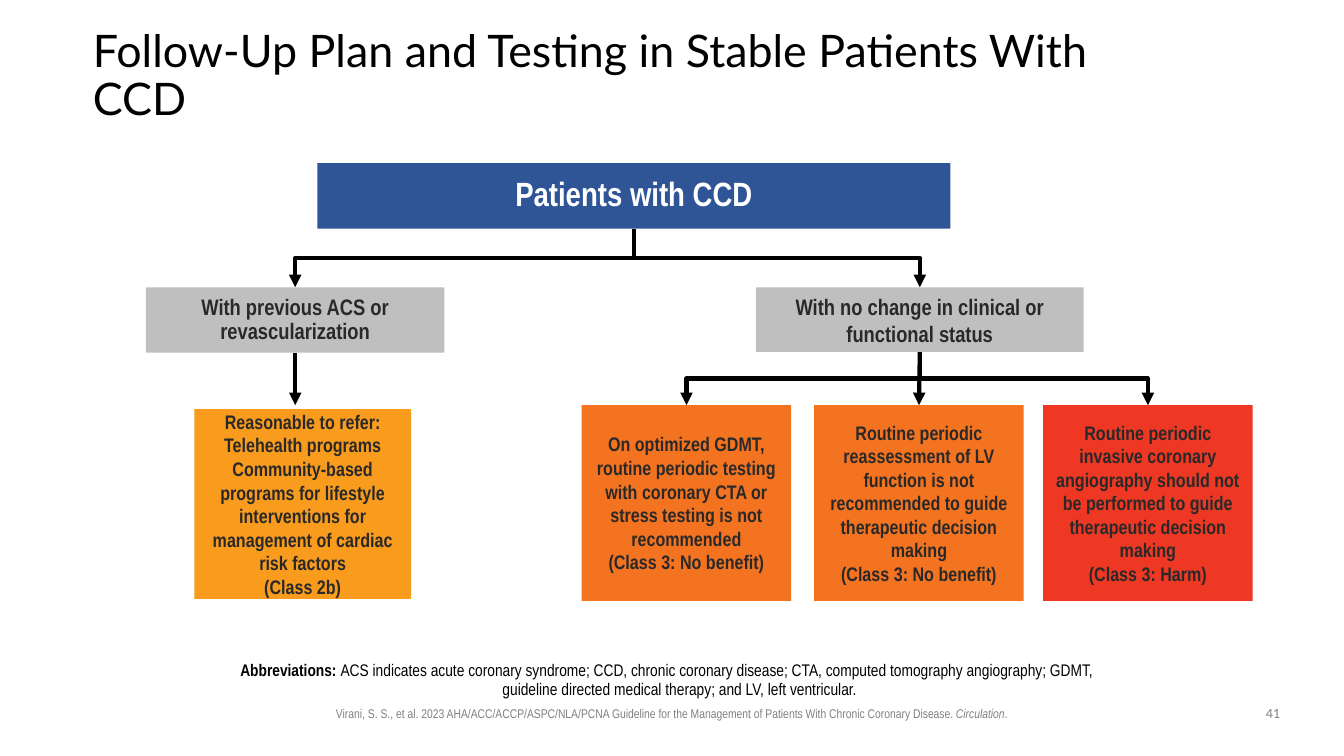
from dataclasses import dataclass

from lxml.etree import SubElement
from pptx import Presentation
from pptx.dml.color import RGBColor
from pptx.enum.shapes import MSO_CONNECTOR, MSO_SHAPE
from pptx.enum.text import MSO_ANCHOR, MSO_AUTO_SIZE, PP_ALIGN
from pptx.oxml.ns import qn
from pptx.util import Cm, Pt

COLORS = {
    "black": "000000", "white": "FFFFFF", "ink": "292929", "footer": "808080",
    "blue": "2F5597", "gray": "BFBFBF", "amber": "F99B1D",
    "orange": "F47320", "red": "EE3823",
}
NARROW = "Arial Narrow"
HEADING = "Lato"
DEFAULT_INSETS = (0.25, 0.13, 0.25, 0.13)


@dataclass
class Span:
    text: str
    bold: bool = False
    italic: bool = False


@dataclass
class Node:
    """A box of the flow chart, with lengths in centimetres."""
    left: float
    top: float
    width: float
    height: float
    fill: str
    paragraphs: list[str]
    size: float = 14
    color: str = "ink"
    spacing: float = 1.0

    @property
    def center(self) -> float:
        return self.left + self.width / 2

    @property
    def bottom(self) -> float:
        return self.top + self.height


ROW_TOP, ROW_WIDTH, ROW_HEIGHT = 10.21, 5.28, 4.93

PATIENTS = Node(8, 4.11, 15.95, 1.65, "blue", ["Patients with CCD"], 24, "white", 0.9)
PREVIOUS_ACS = Node(3.68, 7.24, 7.52, 1.65, "gray",
                    ["With previous ACS or revascularization"], 16, spacing=0.9)
NO_CHANGE = Node(19.05, 7.24, 8.26, 1.63, "gray",
                 ["With no change in clinical or functional status"], 16)
REFERRAL = Node(4.9, 10.31, 5.46, 4.78, "amber", [
    "Reasonable to refer:",
    "Telehealth programs\nCommunity-based programs for lifestyle interventions "
    "for management of cardiac risk factors",
    "(Class 2b)",
])
TESTING, REASSESSMENT, ANGIOGRAPHY = [
    Node(left, ROW_TOP, ROW_WIDTH, ROW_HEIGHT, fill, paragraphs)
    for left, fill, paragraphs in [
        (14.66, "orange", [
            "On optimized GDMT, routine periodic testing with coronary CTA or "
            "stress testing is not recommended",
            "(Class 3: No benefit)"]),
        (20.52, "orange", [
            "Routine periodic reassessment of LV function is not recommended "
            "to guide therapeutic decision making",
            "(Class 3: No benefit)"]),
        (26.29, "red", [
            "Routine periodic invasive coronary angiography should not be "
            "performed to guide therapeutic decision making\n(Class 3: Harm)"]),
    ]
]
NODES = [PATIENTS, PREVIOUS_ACS, NO_CHANGE, REFERRAL, TESTING, REASSESSMENT, ANGIOGRAPHY]


def write_text(box, paragraphs: list[list[Span]], *, size: float, color: str = "black",
               font: str = NARROW, align=PP_ALIGN.CENTER, anchor=MSO_ANCHOR.TOP,
               insets=DEFAULT_INSETS, spacing: float = 1.0, hanging: float = 0) -> None:
    frame = box.text_frame
    frame.word_wrap = True
    frame.auto_size = MSO_AUTO_SIZE.NONE
    frame.vertical_anchor = anchor
    (frame.margin_left, frame.margin_top,
     frame.margin_right, frame.margin_bottom) = map(Cm, insets)
    for index, spans in enumerate(paragraphs):
        para = frame.add_paragraph() if index else frame.paragraphs[0]
        if hanging:
            properties = para._p.get_or_add_pPr()
            properties.set("marL", str(Cm(hanging)))
            properties.set("indent", str(-Cm(hanging)))
            SubElement(properties, qn("a:buNone"))
        para.alignment = align
        para.line_spacing = spacing
        para.space_before = Pt(0)
        for span in spans:
            for line_number, line in enumerate(span.text.split("\n")):
                if line_number:
                    para.add_line_break()
                run = para.add_run()
                run.text = line
                run.font.name = font
                run.font.size = Pt(size)
                run.font.bold = span.bold
                run.font.italic = span.italic
                run.font.color.rgb = RGBColor.from_string(COLORS[color])


def place(box, left: float, top: float, width: float, height: float) -> None:
    box.left, box.top, box.width, box.height = map(Cm, (left, top, width, height))


def draw_node(page, node: Node) -> None:
    box = page.shapes.add_shape(MSO_SHAPE.RECTANGLE, *map(
        Cm, (node.left, node.top, node.width, node.height)))
    box.shadow.inherit = False
    box.fill.solid()
    box.fill.fore_color.rgb = RGBColor.from_string(COLORS[node.fill])
    box.line.fill.background()
    write_text(box, [[Span(text, bold=True)] for text in node.paragraphs],
               size=node.size, color=node.color, anchor=MSO_ANCHOR.MIDDLE,
               spacing=node.spacing)


def draw_arrow(page, kind, x1: float, y1: float, x2: float, y2: float):
    arrow = page.shapes.add_connector(kind, *map(Cm, (x1, y1, x2, y2)))
    arrow.line.width = Pt(3)
    arrow.line.color.rgb = RGBColor.from_string(COLORS["black"])
    SubElement(arrow.line._get_or_add_ln(), qn("a:tailEnd"), type="triangle")
    SubElement(arrow._element.spPr, qn("a:effectLst"))
    return arrow


def draw_elbow(page, parent: Node, child: Node) -> None:
    """Turn a bent connector a quarter so that it leaves and arrives vertically."""
    drop = child.top - parent.bottom
    reach = abs(child.center - parent.center)
    middle_x = (parent.center + child.center) / 2
    middle_y = (parent.bottom + child.top) / 2
    arrow = draw_arrow(page, MSO_CONNECTOR.ELBOW,
                       middle_x - drop / 2, middle_y - reach / 2,
                       middle_x + drop / 2, middle_y + reach / 2)
    transform = arrow._element.spPr.find(qn("a:xfrm"))
    if child.center < parent.center:
        transform.set("rot", str(90 * 60000))
    else:
        transform.set("rot", str(270 * 60000))
        transform.set("flipH", "1")


def main() -> None:
    deck = Presentation()
    deck.slide_width, deck.slide_height = Cm(33.87), Cm(19.05)
    page = deck.slides.add_slide(deck.slide_layouts[1])

    title = page.shapes.title
    place(title, 2.34, 1.02, 27.18, 1.83)
    write_text(title, [[Span("Follow-Up Plan and Testing in Stable Patients With CCD")]],
               size=32, font=HEADING, align=PP_ALIGN.LEFT, anchor=MSO_ANCHOR.MIDDLE,
               insets=(0, 0, 0, 0), spacing=0.9)

    abbreviations = page.placeholders[1]
    place(abbreviations, 5.72, 16.56, 22.43, 1.07)
    write_text(abbreviations, [[
        Span("Abbreviations: ", bold=True),
        Span("ACS indicates acute coronary syndrome; CCD, chronic coronary disease; "
             "CTA, computed tomography angiography; GDMT, guideline directed medical "
             "therapy; and LV, left ventricular."),
    ]], size=12, insets=(0, 0.13, 0.25, 0.13), spacing=0.9, hanging=0.64)

    for parent, child in [(PATIENTS, PREVIOUS_ACS), (PATIENTS, NO_CHANGE),
                          (NO_CHANGE, TESTING), (NO_CHANGE, ANGIOGRAPHY)]:
        draw_elbow(page, parent, child)
    for parent, end_x in [(PREVIOUS_ACS, PREVIOUS_ACS.center),
                          (NO_CHANGE, REASSESSMENT.center)]:
        draw_arrow(page, MSO_CONNECTOR.STRAIGHT,
                   parent.center, parent.bottom, end_x, ROW_TOP)
    for node in NODES:
        draw_node(page, node)

    citation = page.shapes.add_textbox(*map(Cm, (7.47, 17.65, 18.92, 0.64)))
    write_text(citation, [[
        Span("Virani, S. S., et al. 2023 AHA/ACC/ACCP/ASPC/NLA/PCNA Guideline for the "
             "Management of Patients With Chronic Coronary Disease. "),
        Span("Circulation", italic=True),
        Span("."),
    ]], size=9, color="footer")
    page_number = page.shapes.add_textbox(*map(Cm, (31.55, 17.65, 1.07, 0.66)))
    write_text(page_number, [[Span("41")]], size=9, color="footer", font=HEADING)

    deck.save("out.pptx")


if __name__ == "__main__":
    main()
